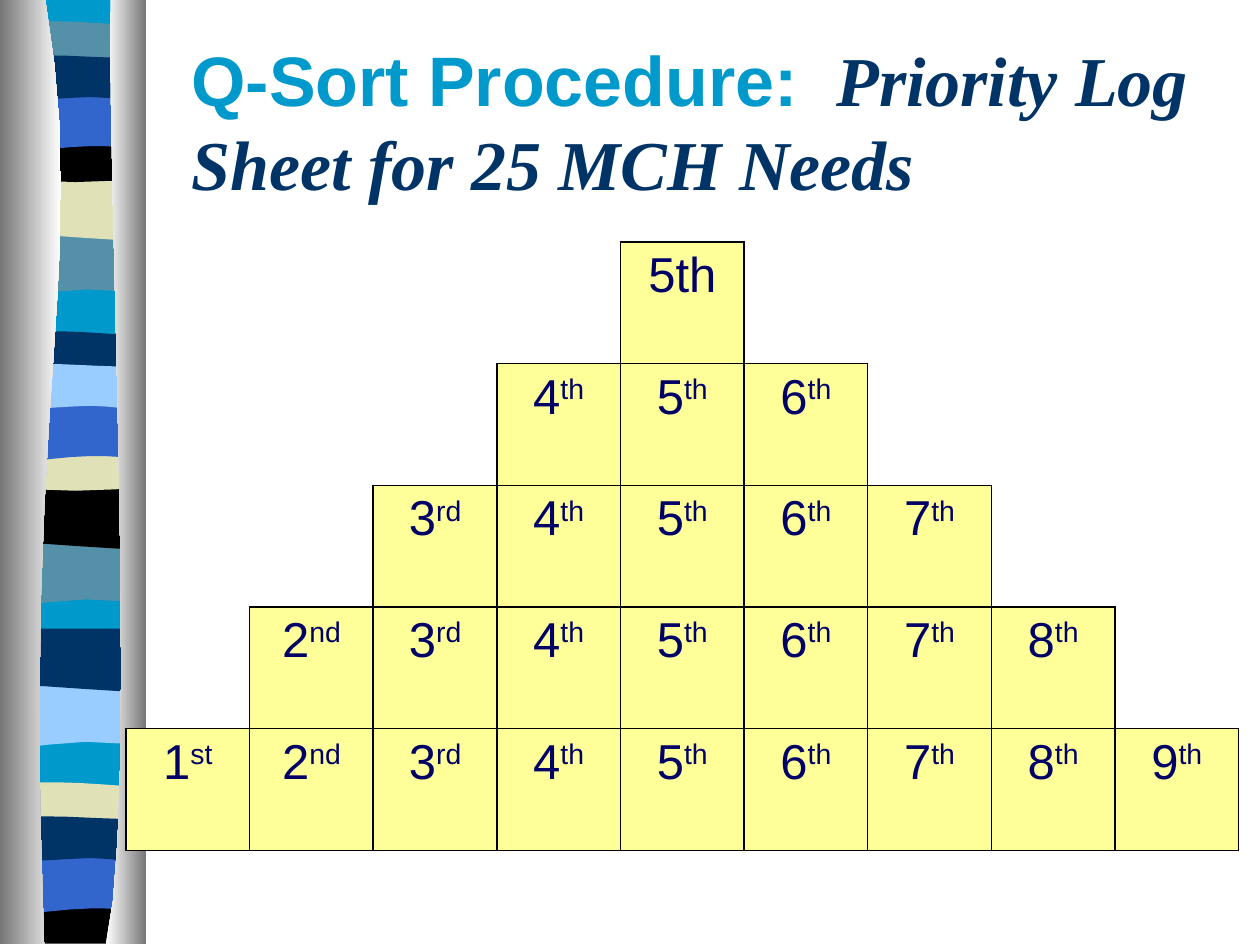
import pptx
import pptx.util
import pptx.dml.color
import pptx.enum.text
import pptx.oxml.ns
import lxml.etree

COLORS = {
    "sky": "0099CC", "teal": "5490A8", "sand": "E1E1B7", "black": "000000",
    "blue": "3366CC", "navy": "003366", "pale": "99CCFF", "white": "FFFFFF",
    "grey": "767676", "cell": "FFFF99", "ink": "000066",
}

LEFT, RIGHT = 0.05, 1.14

WAVES = {
    "dip": (0.47, [(0.39, 0.39, 0.24, 0.55, LEFT, 0.47)]),
    "rise": (0.47, [(0.96, 0.55, 0.39, 0.41, LEFT, 0.47)]),
    "thin": (0.24, [(0.96, 0.29, 0.24, 0.29, LEFT, 0.24)]),
    "bowl": (0.32, [(0.96, 0.38, 0.24, 0.38, LEFT, 0.32)]),
    "arch": (0.47, [(0.97, 0.42, 0.9, 0.42, 0.72, 0.42), (0.54, 0.42, 0.22, 0.47, LEFT, 0.47)]),
    "ripple": (0.31, [(1.07, 0.36, 0.9, 0.31, 0.72, 0.31), (0.54, 0.31, 0.17, 0.36, LEFT, 0.31)]),
    "floor": (0.37, []),
}
SWELL = [(0.72, 0.05, 0.91, 0, RIGHT, 0)]
CRESTS = {
    "thin": [(0.12, -0.05, 0.29, -0.04, 0.47, -0.04), (0.65, -0.04, 1, -0.01, RIGHT, 0)],
    "bowl": SWELL,
    "floor": SWELL,
    "ripple": [(0.21, -0.05, 0.79, 0, 0.97, 0)],
}

BANDS = [
    ("dip", 1.85, "teal"), ("rise", 1.41, "sand"), ("thin", 0.21, "teal"),
    ("bowl", 1.08, "black"), ("arch", 0.74, "blue"), ("ripple", 0.46, "navy"),
    ("dip", 4.31, "teal"), ("rise", 3.86, "black"), ("thin", 2.67, "navy"),
    ("bowl", 3.53, "sand"), ("arch", 3.2, "blue"), ("ripple", 2.91, "pale"),
    ("dip", 5.44, "pale"), ("rise", 4.99, "navy"), ("thin", 6.25, "sand"),
    ("floor", 7.12, "black"), ("arch", 6.79, "blue"), ("ripple", 6.5, "navy"),
]

RANKS = 9
LEVELS = 5
SUFFIXES = {1: "st", 2: "nd", 3: "rd"}


def trace(start, curves, steps=4):
    points = [start]
    for x1, y1, x2, y2, x3, y3 in curves:
        x0, y0 = points[-1]
        for step in range(1, steps + 1):
            t = step / steps
            a, b, c, d = (1 - t) ** 3, 3 * t * (1 - t) ** 2, 3 * t * t * (1 - t), t ** 3
            points.append((a * x0 + b * x1 + c * x2 + d * x3,
                           a * y0 + b * y1 + c * y2 + d * y3))
    return points


class Deck:
    columns, rows = 10, 7.5
    heading_size, rank_size = 40, 28
    heading_font, accent_font = "Arial", "Times New Roman"

    def __init__(self):
        self.show = pptx.Presentation()
        self.show.slide_width = self.span(self.columns)
        self.show.slide_height = self.span(self.rows)
        self.slide = self.show.slides.add_slide(self.show.slide_layouts[5])

    def span(self, cells):
        return pptx.util.Inches(cells)

    def color(self, name):
        return pptx.dml.color.RGBColor.from_string(COLORS[name])

    def outline(self, points, *fills):
        corners = [(self.span(x), self.span(y)) for x, y in points]
        pen = self.slide.shapes.build_freeform(*corners[0])
        pen.add_line_segments(corners[1:], close=True)
        area = pen.convert_to_shape()
        area.shadow.inherit = False
        area.line.fill.background()
        if len(fills) == 1:
            area.fill.solid()
            area.fill.fore_color.rgb = self.color(fills[0])
            return
        area.fill.gradient()
        area.fill.gradient_angle = 0
        for stop, name in zip(area.fill.gradient_stops, fills):
            stop.color.rgb = self.color(name)

    def band(self, kind, top, fill):
        depth, wave = WAVES[kind]
        edge = trace((RIGHT, depth), wave)
        if not wave:
            edge.append((LEFT, depth))
        edge += trace((LEFT, 0), CRESTS.get(kind, []))
        if edge[-1] != (RIGHT, 0):
            edge.append((RIGHT, 0))
        self.outline([(x, y + top) for x, y in edge], fill)

    def title(self, left, top, width, height, parts):
        heading = self.slide.shapes.title
        heading.left, heading.top = self.span(left), self.span(top)
        heading.width, heading.height = self.span(width), self.span(height)
        frame = heading.text_frame
        frame.word_wrap = True
        frame.auto_size = pptx.enum.text.MSO_AUTO_SIZE.NONE
        frame.vertical_anchor = pptx.enum.text.MSO_ANCHOR.MIDDLE
        line = frame.paragraphs[0]
        line.alignment = pptx.enum.text.PP_ALIGN.LEFT
        for words, face, name, italic in parts:
            run = line.add_run()
            run.text = words
            run.font.name, run.font.size = face, pptx.util.Pt(self.heading_size)
            run.font.bold, run.font.italic = True, italic
            run.font.color.rgb = self.color(name)

    def border(self, cell, side, drawn):
        edge = lxml.etree.SubElement(cell._tc.get_or_add_tcPr(), pptx.oxml.ns.qn("a:ln" + side))
        edge.set("w", str(pptx.util.Pt(1)))
        paint = lxml.etree.SubElement(edge, pptx.oxml.ns.qn("a:solidFill" if drawn else "a:noFill"))
        if drawn:
            lxml.etree.SubElement(paint, pptx.oxml.ns.qn("a:srgbClr")).set("val", COLORS["black"])

    def rank(self, cell, number, suffix, raised):
        line = cell.text_frame.paragraphs[0]
        line.alignment = pptx.enum.text.PP_ALIGN.CENTER
        line.font.name, line.font.size = self.heading_font, pptx.util.Pt(self.rank_size)
        line.font.color.rgb = self.color("ink")
        gap = lxml.etree.Element(pptx.oxml.ns.qn("a:spcBef"))
        lxml.etree.SubElement(gap, pptx.oxml.ns.qn("a:spcPct")).set("val", "20000")
        line._p.get_or_add_pPr().insert(0, gap)
        if not raised:
            line.add_run().text = f"{number}{suffix}"
            return
        line.add_run().text = str(number)
        ending = line.add_run()
        ending.text = suffix
        ending.font._element.set("baseline", "30000")

    def pyramid(self, left, top, width, height):
        grid = self.slide.shapes.add_table(
            LEVELS, RANKS, self.span(left), self.span(top), self.span(width), self.span(height)).table
        grid.first_row = grid.horz_banding = False
        middle = RANKS // 2

        def filled(level, place):
            return 0 <= level < LEVELS and abs(place - middle) <= level

        for level in range(LEVELS):
            for place in range(RANKS):
                cell = grid.cell(level, place)
                own = filled(level, place)
                for side, down, across in (("L", 0, -1), ("R", 0, 1), ("T", -1, 0), ("B", 1, 0)):
                    self.border(cell, side, own or filled(level + down, place + across))
                if own:
                    cell.fill.solid()
                    cell.fill.fore_color.rgb = self.color("cell")
                    number = place + 1
                    self.rank(cell, number, SUFFIXES.get(number, "th"), level > 0)
                else:
                    cell.fill.background()


def main():
    deck = Deck()
    deck.outline([(LEFT, 0), (RIGHT, 0), (RIGHT, 7.47), (LEFT, 7.47)], "sky")
    for kind, top, fill in BANDS:
        deck.band(kind, top, fill)
    left_rail = trace((0.36, 0), [(0.72, 2.16, 0.17, 2.96, 0.35, 7.49)], 12)
    deck.outline(left_rail + [(0, 7.49), (0, 0)], "grey", "white")
    right_rail = trace((0.88, 0), [(0.84, 1.25, 1.11, 6.46, 0.84, 7.49)], 12)
    deck.outline(right_rail + [(1.16, 7.49), (1.16, 0)], "white", "grey")
    deck.title(1.42, 0.17, 8.25, 1.58, [
        ("Q-Sort Procedure:  ", deck.heading_font, "sky", False),
        ("Priority Log Sheet for 25 MCH Needs", deck.accent_font, "navy", True),
    ])
    deck.pyramid(1, 1.92, 8.83, 4.83)
    deck.show.save("out.pptx")


if __name__ == "__main__":
    main()
